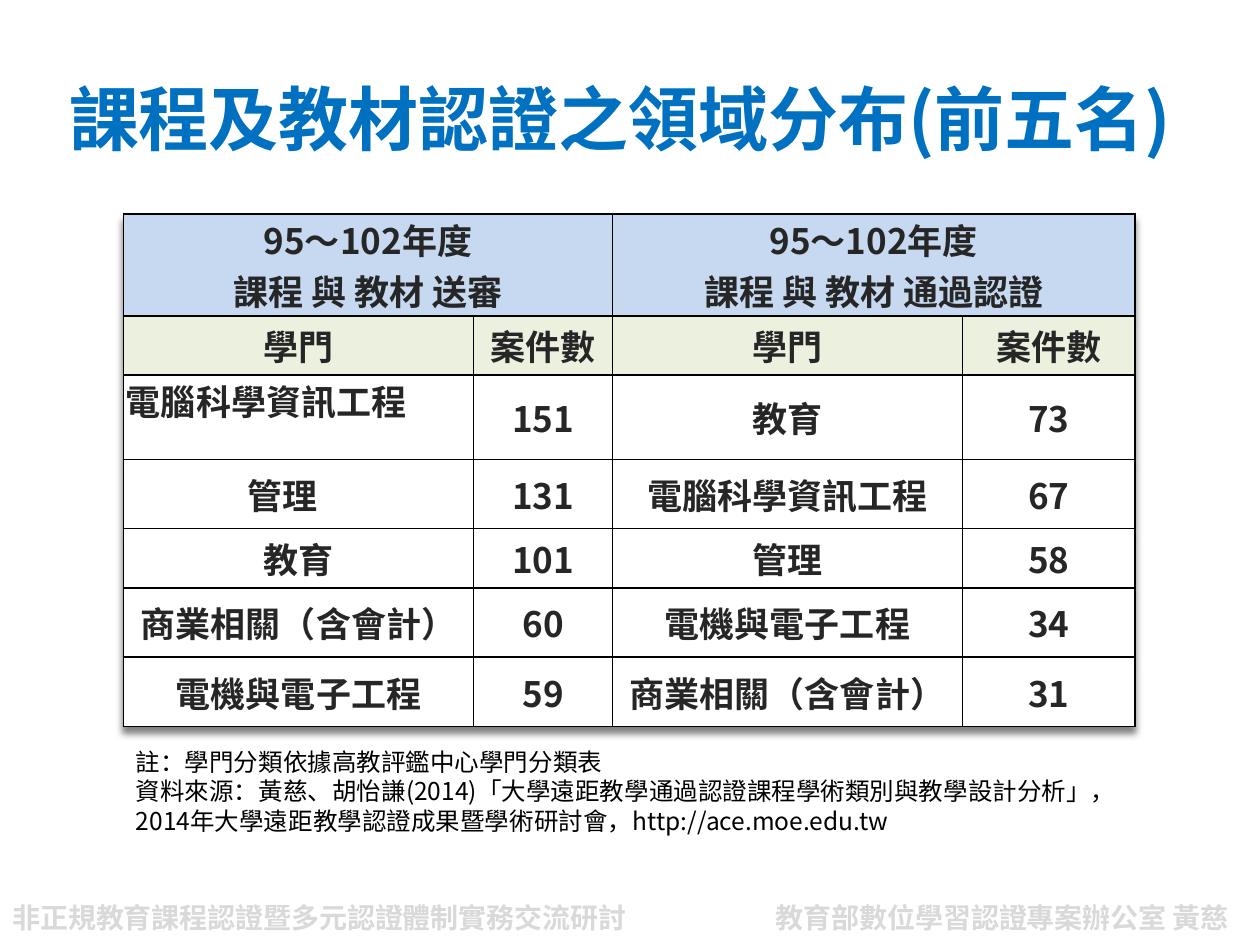
"""Build a slide ranking the top five fields of course and material certification."""
from lxml import etree
from pptx import Presentation
from pptx.dml.color import RGBColor
from pptx.enum.text import MSO_ANCHOR, PP_ALIGN
from pptx.oxml import parse_xml
from pptx.oxml.ns import nsdecls, qn
from pptx.util import Inches, Pt

FACE = "Noto Sans CJK SC"
COLORS = {
    "title": "0070C0", "foot": "D9D9D9", "note": "000000", "cell": "262626",
    "head": "C6D9F1", "label": "EBF1DE", "body": "FFFFFF", "rule": "000000",
}
TITLE = ["課程及教材認證之領域分布(前五名)"]
NOTES = [
    "註：學門分類依據高教評鑑中心學門分類表",
    "資料來源：黃慈、胡怡謙(2014)「大學遠距教學通過認證課程學術類別與教學設計分析」，"
    "2014年大學遠距教學認證成果暨學術研討會，http://ace.moe.edu.tw",
]
EVENT = ["非正規教育課程認證暨多元認證體制實務交流研討"]
OFFICE = ["教育部數位學習認證專案辦公室 黃慈"]
ROWS = [
    ["95～102年度\n課程 與 教材 送審", "", "95～102年度\n課程 與 教材 通過認證", ""],
    ["學門", "案件數"] * 2,
    ["電腦科學資訊工程", "151", "教育", "73"],
    ["管理", "131", "電腦科學資訊工程", "67"],
    ["教育", "101", "管理", "58"],
    ["商業相關（含會計）", "60", "電機與電子工程", "34"],
    ["電機與電子工程", "59", "商業相關（含會計）", "31"],
]
WIDTHS = [2.78, 1.1, 2.78, 1.37]
HEIGHTS = [0.79, 0.47, 0.67, 0.55, 0.47, 0.55, 0.55]
TEXTS = [
    (TITLE, (0.42, 0.27, 9, 1.33), 40, "title", True, PP_ALIGN.CENTER, MSO_ANCHOR.MIDDLE),
    (EVENT, (0, 7.1, 5.55, 0.37), 16, "foot", True, PP_ALIGN.LEFT, MSO_ANCHOR.TOP),
    (NOTES, (0.98, 5.88, 8.03, 0.81), 14, "note", False, PP_ALIGN.LEFT, MSO_ANCHOR.TOP),
    (OFFICE, (6.06, 7.1, 3.98, 0.37), 16, "foot", True, PP_ALIGN.LEFT, MSO_ANCHOR.TOP),
]


def write(frame, lines, size, color, bold, align):
    frame.text = "\n".join(lines)
    for para in frame.paragraphs:
        para.alignment = align
        font = para.font
        font.size, font.bold, font.name = Pt(size), bold, FACE
        font.color.rgb = RGBColor.from_string(COLORS[color])
        props = para._p.pPr.find(qn("a:defRPr"))
        etree.SubElement(props, qn("a:ea")).set("typeface", FACE)


def border(cell):
    props = cell._tc.get_or_add_tcPr()
    for spot, side in enumerate("LRTB"):
        props.insert(spot, parse_xml(
            f'<a:ln{side} {nsdecls("a")} w="12700"><a:solidFill>'
            f'<a:srgbClr val="{COLORS["rule"]}"/></a:solidFill></a:ln{side}>'))


def add_text(slide, lines, place, size, color, bold, align, anchor):
    frame = slide.shapes.add_textbox(*map(Inches, place)).text_frame
    frame.word_wrap = True
    frame.vertical_anchor = anchor
    write(frame, lines, size, color, bold, align)
    for para in frame.paragraphs:
        para.line_spacing = Pt(round(size * 1.2, 1))


def add_grid(slide):
    table = slide.shapes.add_table(
        len(ROWS), len(WIDTHS), Inches(0.98), Inches(1.7),
        Inches(sum(WIDTHS)), Inches(sum(HEIGHTS))).table
    for col, width in zip(table.columns, WIDTHS):
        col.width = Inches(width)
    for row, height in zip(table.rows, HEIGHTS):
        row.height = Inches(height)
    fills = ["head", "label"] + ["body"] * 5
    for r, row in enumerate(ROWS):
        for c, text in enumerate(row):
            cell = table.cell(r, c)
            cell.margin_left = cell.margin_right = Inches(0.02)
            cell.margin_top = cell.margin_bottom = 0
            cell.vertical_anchor = MSO_ANCHOR.MIDDLE
            cell.fill.solid()
            cell.fill.fore_color.rgb = RGBColor.from_string(COLORS[fills[r]])
            border(cell)
            write(cell.text_frame, text.split("\n"), 20, "cell", True, PP_ALIGN.CENTER)
    for c in (0, 2):
        table.cell(0, c).merge(table.cell(0, c + 1))
    first = table.cell(2, 0)
    first.vertical_anchor = MSO_ANCHOR.TOP
    first.text_frame.paragraphs[0].alignment = PP_ALIGN.LEFT
    table.cell(3, 0).margin_right = Inches(0.27)
    table._tbl.tblPr.insert(0, parse_xml(
        f'<a:effectLst {nsdecls("a")}><a:outerShdw blurRad="50800" dist="50800" '
        'dir="5400000"><a:srgbClr val="000000"><a:alpha val="50000"/></a:srgbClr>'
        '</a:outerShdw></a:effectLst>'))


def main():
    deck = Presentation()
    deck.slide_width, deck.slide_height = Inches(10), Inches(7.5)
    slide = deck.slides.add_slide(deck.slide_layouts[6])
    add_grid(slide)
    for item in TEXTS:
        add_text(slide, *item)
    deck.save("out.pptx")


if __name__ == "__main__":
    main()
